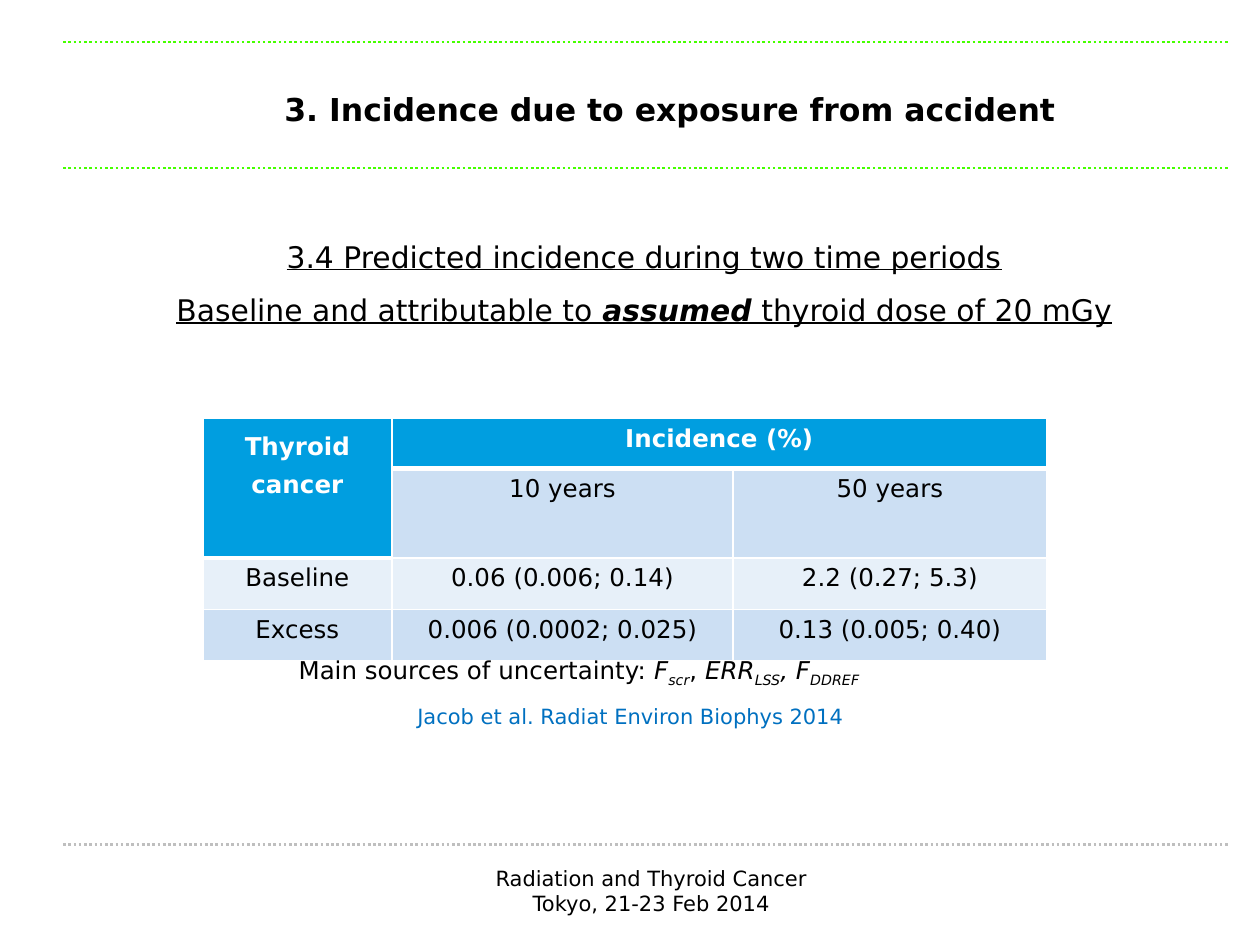
from lxml import etree
from pptx import Presentation
from pptx.dml.color import RGBColor
from pptx.enum.dml import MSO_LINE
from pptx.enum.shapes import MSO_CONNECTOR
from pptx.enum.text import MSO_AUTO_SIZE, PP_ALIGN
from pptx.oxml.ns import qn
from pptx.util import Cm, Pt

STRAIGHT = MSO_CONNECTOR.STRAIGHT
DOTTED = MSO_LINE.ROUND_DOT
FIT_SHAPE = MSO_AUTO_SIZE.SHAPE_TO_FIT_TEXT
LEFT, CENTER = PP_ALIGN.LEFT, PP_ALIGN.CENTER

BLACK = RGBColor(0x00, 0x00, 0x00)
WHITE = RGBColor(0xFF, 0xFF, 0xFF)
GREEN = RGBColor(0x46, 0xFF, 0x00)
GREY = RGBColor(0xBF, 0xBF, 0xBF)
BLUE = RGBColor(0x00, 0x9E, 0xE0)
BAND_DARK = RGBColor(0xCC, 0xDF, 0xF3)
BAND_LIGHT = RGBColor(0xE7, 0xF0, 0xF9)
CITATION = RGBColor(0x00, 0x70, 0xC0)


class SlideBuilder:
    """Holds the style and the current slide, and draws each kind of element."""

    font = "DejaVu Sans"

    def __init__(self, prs):
        self.s = prs.slides.add_slide(prs.slide_layouts[6])

    def rule(self, y, color):
        c = self.s.shapes.add_connector(STRAIGHT, Cm(1.27), Cm(y), Cm(24.77), Cm(y))
        c.line.color.rgb = color
        c.line.width = Pt(1.5)
        c.line.dash_style = DOTTED
        etree.SubElement(c._element.spPr, qn("a:effectLst"))

    def run(self, p, text, size, color=BLACK, style=""):
        r = p.add_run()
        r.text = text
        f = r.font
        f.name, f.size, f.color.rgb = self.font, Pt(size), color
        f.bold, f.italic = "b" in style, "i" in style
        f.underline = "u" in style
        if "s" in style:
            r._r.get_or_add_rPr().set("baseline", "-25000")

    def text(self, x, y, w, h, paragraphs, align=CENTER, spacing=None, wrap=True):
        tf = self.s.shapes.add_textbox(Cm(x), Cm(y), Cm(w), Cm(h)).text_frame
        tf.word_wrap = wrap
        tf.auto_size = FIT_SHAPE
        for i, runs in enumerate(paragraphs):
            p = tf.add_paragraph() if i else tf.paragraphs[0]
            p.alignment = align
            p.line_spacing = spacing
            for args in runs:
                self.run(p, *args)

    def border(self, cell, side, width):
        ln = etree.SubElement(cell._tc.get_or_add_tcPr(), qn(f"a:ln{side}"), w=str(Pt(width)))
        fill = etree.SubElement(ln, qn("a:solidFill"))
        etree.SubElement(fill, qn("a:srgbClr"), val=str(WHITE))

    def table(self, x, y, widths, heights, rows, fills, headers, merges):
        tbl = self.s.shapes.add_table(len(rows), len(widths), Cm(x), Cm(y),
                                      Cm(sum(widths)), Cm(sum(heights))).table
        for col, w in zip(tbl.columns, widths):
            col.width = Cm(w)
        for row, h in zip(tbl.rows, heights):
            row.height = Cm(h)
        for i, row in enumerate(rows):
            for j, text in enumerate(row):
                cell = tbl.cell(i, j)
                header = (i, j) in headers
                below_header = (i - 1, j) in headers
                for side, thick in (("L", False), ("R", False), ("T", below_header), ("B", header)):
                    self.border(cell, side, 3 if thick else 1)
                cell.fill.solid()
                cell.fill.fore_color.rgb = BLUE if header else fills[i]
                if text:
                    p = cell.text_frame.paragraphs[0]
                    p.alignment = CENTER
                    if (i, j) == (0, 0):
                        p.line_spacing = 1.3
                    self.run(p, text, 14, WHITE if header else BLACK, "b" if header else "")
        for first, last in merges:
            tbl.cell(*first).merge(tbl.cell(*last))


def main():
    prs = Presentation()
    prs.slide_width, prs.slide_height = Cm(25.4), Cm(19.05)
    b = SlideBuilder(prs)

    for y, color in ((3.39, GREEN), (0.85, GREEN), (17.02, GREY)):
        b.rule(y, color)
    b.text(9.7, 17.32, 6.86, 1.27,
           [[("Radiation and Thyroid Cancer", 12)], [("Tokyo, 21-23 Feb 2014", 12)]], wrap=False)
    b.text(2.9, 1.6, 21.21, 1.12,
           [[("3. Incidence due to exposure from accident", 18, BLACK, "b")]], spacing=Pt(24))
    b.text(1.09, 4.32, 23.8, 2.44, [
        [("3.4 Predicted incidence during two time periods", 17, BLACK, "u")],
        [("Baseline and attributable to ", 17, BLACK, "u"),
         ("assumed", 17, BLACK, "biu"),
         (" thyroid dose of 20 mGy", 17, BLACK, "u")],
    ], spacing=1.5)

    b.table(4.09, 8.43, (3.81, 6.88, 6.32), (1.02, 1.02, 1.04, 1.04), [
        ("Thyroid cancer", "Incidence (%)", ""),
        ("", "10 years", "50 years"),
        ("Baseline", "0.06 (0.006; 0.14)", "2.2 (0.27; 5.3)"),
        ("Excess", "0.006 (0.0002; 0.025)", "0.13 (0.005; 0.40)"),
    ], (BLUE, BAND_DARK, BAND_LIGHT, BAND_DARK),
        headers={(0, 0), (0, 1), (0, 2), (1, 0)},
        merges=(((0, 0), (1, 0)), ((0, 1), (0, 2))))

    factors = (("Main sources of uncertainty: ", ""), ("F", "i"), ("scr", "is"), (", ", ""),
               ("ERR", "i"), ("LSS", "is"), (", F", "i"), ("DDREF", "is"))
    b.text(5.77, 13.08, 12.73, 0.86,
           [[(text, 14, BLACK, style) for text, style in factors]], align=LEFT, wrap=False)
    b.text(0.89, 13.69, 23.8, 1.04,
           [[("Jacob et al. Radiat Environ Biophys 2014", 12, CITATION), (" ", 14, CITATION)]],
           spacing=1.5)
    prs.save("out.pptx")


if __name__ == "__main__":
    main()
